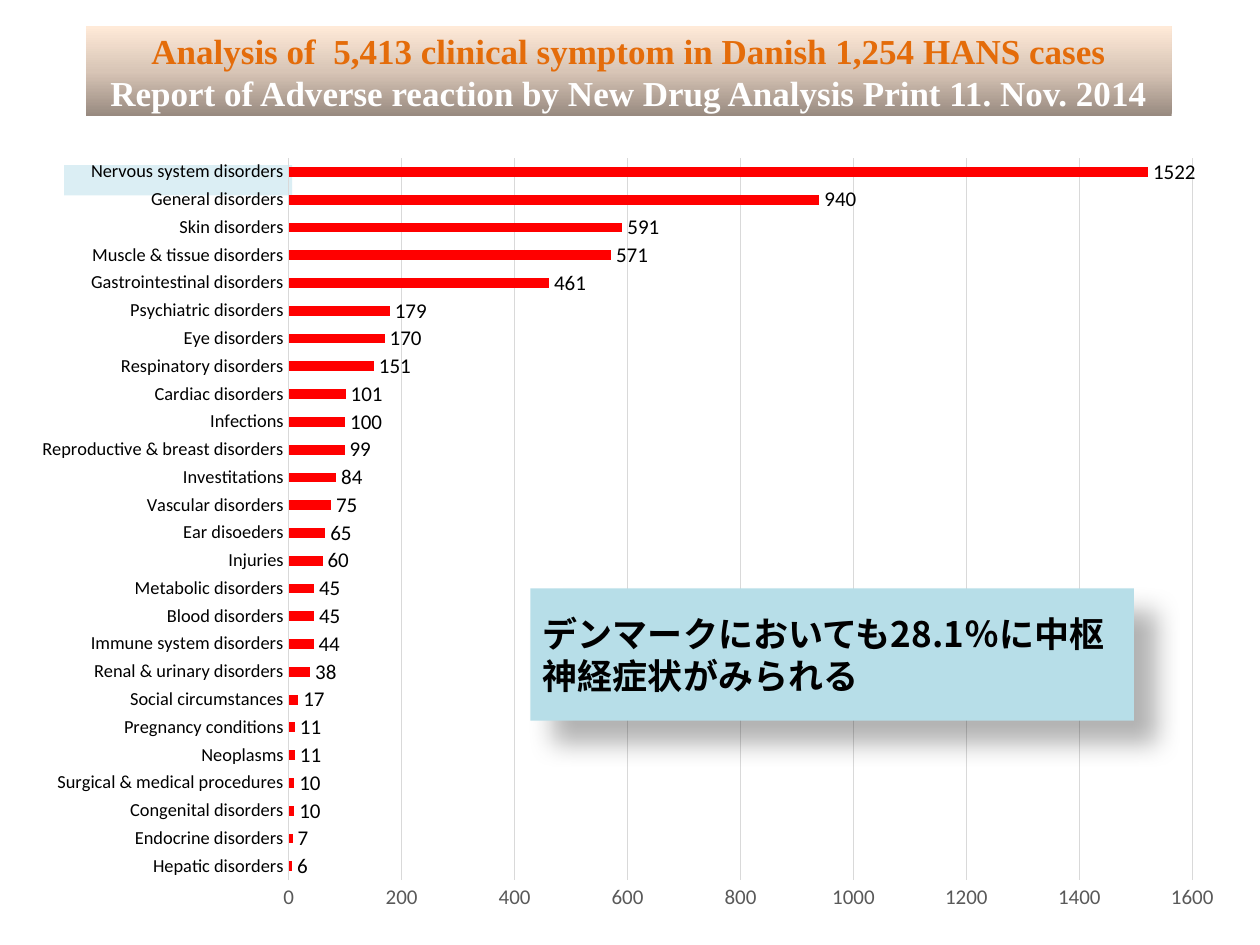
import pptx
import pptx.chart.data
import pptx.dml.color
import pptx.enum.chart
import pptx.enum.shapes
import pptx.enum.text
import pptx.oxml
import pptx.oxml.ns
import pptx.util
from dataclasses import dataclass
from lxml import etree


@dataclass(frozen=True)
class Theme:
    title_font: str = "Times New Roman"
    chart_font: str = "Calibri"
    callout_font: str = "Noto Sans CJK JP"
    heading_size: float = 20
    value_size: float = 12
    category_size: float = 10.5
    black: str = "000000"
    white: str = "FFFFFF"
    orange: str = "E46C0A"
    bar: str = "FF0000"
    grid: str = "D9D9D9"
    axis_text: str = "595959"
    highlight: str = "DBEEF4"
    callout: str = "B7DEE8"
    banner: tuple = ((0, "988A80"), (50, "D8C5B6"), (100, "FFEAD8"))


THEME = Theme()
WIDTH, HEIGHT = pptx.util.Inches(10), pptx.util.Inches(7.5)

SYMPTOMS = [
    ("Hepatic disorders", 6),
    ("Endocrine disorders", 7),
    ("Congenital disorders", 10),
    ("Surgical & medical procedures", 10),
    ("Neoplasms", 11),
    ("Pregnancy conditions", 11),
    ("Social circumstances", 17),
    ("Renal & urinary disorders", 38),
    ("Immune system disorders", 44),
    ("Blood disorders", 45),
    ("Metabolic disorders", 45),
    ("Injuries", 60),
    ("Ear disoeders", 65),
    ("Vascular disorders", 75),
    ("Investitations", 84),
    ("Reproductive & breast disorders", 99),
    ("Infections", 100),
    ("Cardiac disorders", 101),
    ("Respinatory disorders", 151),
    ("Eye disorders", 170),
    ("Psychiatric disorders", 179),
    ("Gastrointestinal disorders", 461),
    ("Muscle & tissue disorders", 571),
    ("Skin disorders", 591),
    ("General disorders", 940),
    ("Nervous system disorders", 1522),
]


def rgb(color):
    return pptx.dml.color.RGBColor.from_string(color)


def place(left, top, width, height):
    shares = ((left, WIDTH), (top, HEIGHT), (width, WIDTH), (height, HEIGHT))
    return [round(share * side / 100) for share, side in shares]


def style_font(font, name, size, color, bold=False):
    font.name = name
    font.size = pptx.util.Pt(size)
    font.bold = bold
    font.color.rgb = rgb(color)


def add_box(slide, box, color):
    sp = slide.shapes.add_shape(pptx.enum.shapes.MSO_SHAPE.RECTANGLE, *place(*box))
    sp.shadow.inherit = False
    sp.line.fill.background()
    sp.fill.solid()
    sp.fill.fore_color.rgb = rgb(color)
    return sp


def start_text(sp, align):
    tf = sp.text_frame
    tf.word_wrap = True
    tf.vertical_anchor = pptx.enum.text.MSO_ANCHOR.MIDDLE
    p = tf.paragraphs[0]
    p.alignment = align
    return p


def set_gradient(sp, stops, angle):
    sp.fill.gradient()
    sp.fill.gradient_angle = angle
    gs_list = sp._element.spPr.find(".//" + pptx.oxml.ns.qn("a:gsLst"))
    for gs in list(gs_list):
        gs_list.remove(gs)
    for share, color in stops:
        gs = etree.SubElement(gs_list, pptx.oxml.ns.qn("a:gs"), pos=str(share * 1000))
        etree.SubElement(gs, pptx.oxml.ns.qn("a:srgbClr"), val=color)


def set_shadow(sp, color, alpha, blur, distance, angle):
    effects = sp._element.spPr.find(pptx.oxml.ns.qn("a:effectLst"))
    effects.append(pptx.oxml.parse_xml(
        f'<a:outerShdw {pptx.oxml.ns.nsdecls("a")} blurRad="{pptx.util.Pt(blur)}" '
        f'dist="{pptx.util.Pt(distance)}" dir="{angle * 60000}" algn="tl" rotWithShape="0">'
        f'<a:srgbClr val="{color}"><a:alpha val="{alpha * 1000}"/></a:srgbClr></a:outerShdw>'))


def add_banner(slide, box, lines):
    sp = add_box(slide, box, THEME.white)
    set_gradient(sp, THEME.banner, 90)
    p = start_text(sp, pptx.enum.text.PP_ALIGN.CENTER)
    style_font(p.font, THEME.title_font, THEME.heading_size, THEME.white, True)
    for i, (text, color) in enumerate(lines):
        if i:
            p.add_line_break()
        r = p.add_run()
        r.text = text
        style_font(r.font, THEME.title_font, THEME.heading_size, color, True)


def add_callout(slide, box, text):
    sp = add_box(slide, box, THEME.callout)
    set_shadow(sp, THEME.black, 30, 15, 18, 45)
    p = start_text(sp, pptx.enum.text.PP_ALIGN.LEFT)
    r = p.add_run()
    r.text = text
    style_font(r.font, THEME.callout_font, THEME.heading_size, THEME.black, True)
    latin = r._r.rPr.find(pptx.oxml.ns.qn("a:latin"))
    ea = etree.Element(pptx.oxml.ns.qn("a:ea"), typeface=THEME.callout_font)
    latin.addnext(ea)


def set_plot_area(chart, x, y, w, h):
    plot_area = chart._chartSpace.chart.plotArea
    for layout in plot_area.findall(pptx.oxml.ns.qn("c:layout")):
        plot_area.remove(layout)
    plot_area.insert(0, pptx.oxml.parse_xml(
        f'<c:layout {pptx.oxml.ns.nsdecls("c")}><c:manualLayout>'
        '<c:layoutTarget val="inner"/><c:xMode val="edge"/><c:yMode val="edge"/>'
        f'<c:x val="{x}"/><c:y val="{y}"/><c:w val="{w}"/><c:h val="{h}"/>'
        '</c:manualLayout></c:layout>'))


def style_axis(axis, size, color):
    axis.major_tick_mark = axis.minor_tick_mark = pptx.enum.chart.XL_TICK_MARK.NONE
    style_font(axis.tick_labels.font, THEME.chart_font, size, color)


def style_line(line):
    line.color.rgb = rgb(THEME.grid)
    line.width = pptx.util.Pt(0.75)


def add_symptom_chart(slide, box):
    data = pptx.chart.data.CategoryChartData()
    data.categories = [name for name, count in SYMPTOMS]
    data.add_series("Series 1", [count for name, count in SYMPTOMS])
    chart = slide.shapes.add_chart(
        pptx.enum.chart.XL_CHART_TYPE.BAR_CLUSTERED, *place(*box), data).chart
    chart.has_title = chart.has_legend = False
    style_font(chart.font, THEME.chart_font, 10, THEME.black)
    set_plot_area(chart, 0.22, 0.02, 0.74, 0.92)

    style_axis(chart.category_axis, THEME.category_size, THEME.black)
    style_line(chart.category_axis.format.line)
    axis = chart.value_axis
    style_axis(axis, THEME.value_size, THEME.axis_text)
    axis.minimum_scale, axis.maximum_scale, axis.major_unit = 0, 1600, 200
    axis.format.line.fill.background()
    style_line(axis.major_gridlines.format.line)

    plot = chart.plots[0]
    plot.gap_width = 182
    plot.vary_by_categories = False
    series = plot.series[0]
    series.format.fill.solid()
    series.format.fill.fore_color.rgb = rgb(THEME.bar)
    labels = series.data_labels
    labels.show_value = True
    labels.position = pptx.enum.chart.XL_LABEL_POSITION.OUTSIDE_END
    style_font(labels.font, THEME.chart_font, THEME.value_size, THEME.black)


def main():
    prs = pptx.Presentation()
    prs.slide_width, prs.slide_height = WIDTH, HEIGHT
    slide = prs.slides.add_slide(prs.slide_layouts[6])
    add_box(slide, (5.1, 17.47, 18.1, 3.2), THEME.highlight)
    add_banner(slide, (6.8, 2.8, 86.2, 9.47), [
        ("Analysis of  5,413 clinical symptom in Danish 1,254 HANS cases", THEME.orange),
        ("Report of Adverse reaction by New Drug Analysis Print 11. Nov. 2014", THEME.white),
    ])
    add_symptom_chart(slide, (1.6, 15.07, 96.9, 83.07))
    add_callout(slide, (42.1, 62.27, 47.9, 14), "デンマークにおいても28.1％に中枢神経症状がみられる")
    prs.save("out.pptx")


if __name__ == "__main__":
    main()
